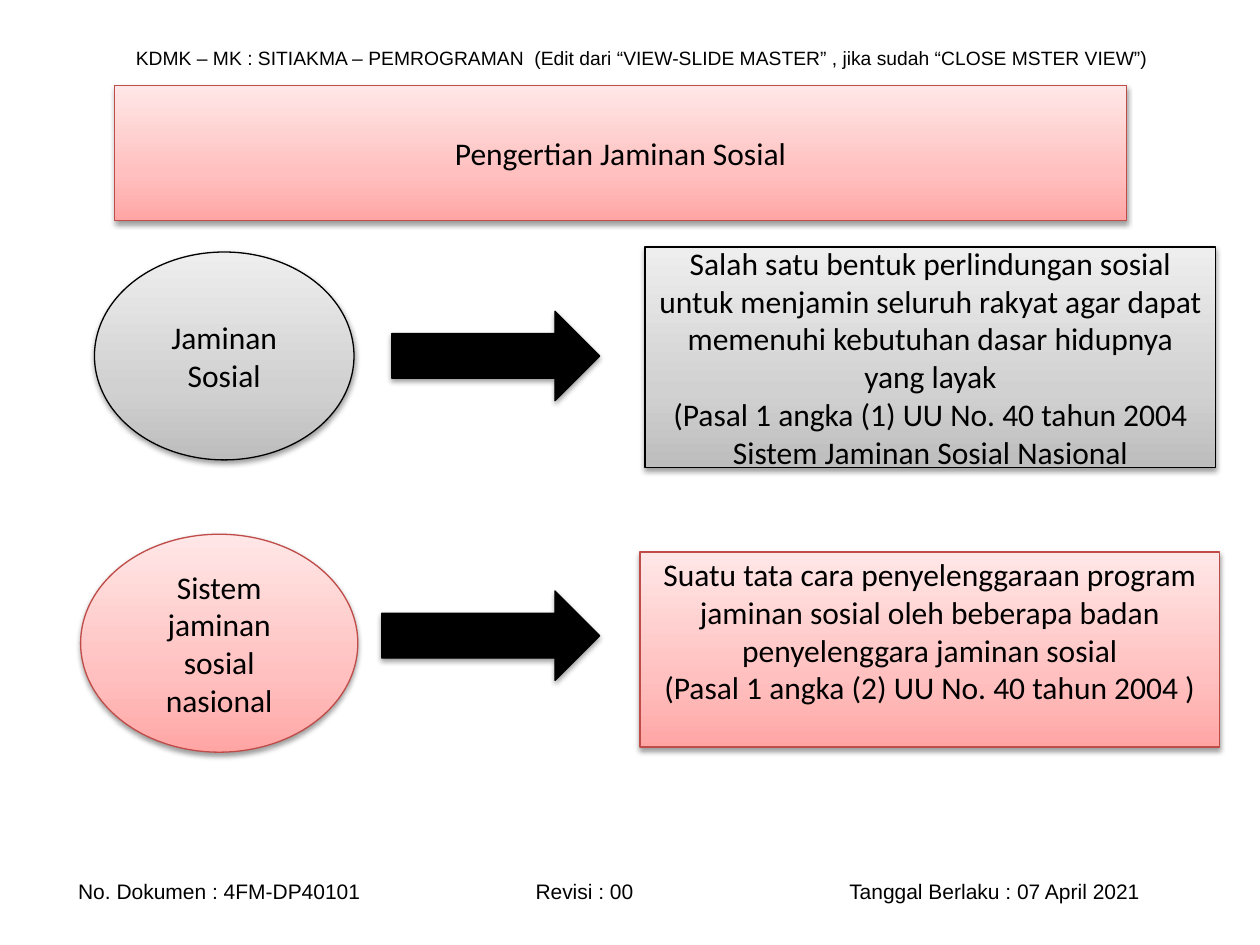
import pptx
import pptx.dml.color
import pptx.enum.shapes
import pptx.enum.text
import pptx.oxml
import pptx.oxml.ns
import pptx.util
from pptx.util import Inches

RGB = pptx.dml.color.RGBColor.from_string
SHAPE = pptx.enum.shapes.MSO_SHAPE
ALIGN = pptx.enum.text.PP_ALIGN
NS = pptx.oxml.ns.nsdecls("a")
qn = pptx.oxml.ns.qn

THEME = {
    "text": "000000",
    "body": {"name": "Calibri", "size": pptx.util.Pt(18)},
    "header": {"name": "Arial", "size": pptx.util.Pt(11)},
    "footer": {"name": "Arial", "size": pptx.util.Pt(12)},
    "red": {"stops": [(0, "FFA6A5"), (35, "FFC0BF"), (100, "FFE7E7")], "line": "BF4C48"},
    "gray": {"stops": [(0, "BDBDBD"), (35, "D1D1D1"), (100, "EEEEEE")], "line": "000000"},
    "black": {"fill": "000000", "line": "000000"},
}


def write(sp, lines, font, align=ALIGN.CENTER):
    tf = sp.text_frame
    settings = {"word_wrap": True, "auto_size": pptx.enum.text.MSO_AUTO_SIZE.NONE,
                "vertical_anchor": pptx.enum.text.MSO_ANCHOR.MIDDLE}
    for key, value in settings.items():
        setattr(tf, key, value)
    for i, line in enumerate(lines):
        p = tf.paragraphs[0] if i == 0 else tf.add_paragraph()
        p.alignment = align
        r = p.add_run()
        r.text = line
        for key, value in THEME[font].items():
            setattr(r.font, key, value)
        r.font.color.rgb = RGB(THEME["text"])
    return tf


def paint(sp, style):
    look = THEME[style]
    spPr = sp._element.spPr
    if "stops" in look:
        sp.fill.gradient()
        sp.fill.gradient_angle = 90
        gsLst = spPr.find(qn("a:gradFill")).find(qn("a:gsLst"))
        for gs in list(gsLst):
            gsLst.remove(gs)
        for pos, color in look["stops"]:
            gsLst.append(pptx.oxml.parse_xml(
                f'<a:gs {NS} pos="{pos * 1000}"><a:srgbClr val="{color}"/></a:gs>'))
    else:
        sp.fill.solid()
        sp.fill.fore_color.rgb = RGB(look["fill"])
    sp.line.color.rgb = RGB(look["line"])
    sp.line.width = pptx.util.Pt(0.75)
    # Soft shadow straight below
    spPr.append(pptx.oxml.parse_xml(
        f'<a:effectLst {NS}><a:outerShdw blurRad="40000" dist="20000" dir="5400000" '
        'rotWithShape="0"><a:srgbClr val="000000"><a:alpha val="38000"/></a:srgbClr>'
        '</a:outerShdw></a:effectLst>'))


prs = pptx.Presentation()
prs.slide_width, prs.slide_height = Inches(10), Inches(7.5)
s = prs.slides.add_slide(prs.slide_layouts[5])

# Header line
sp = s.shapes.add_textbox(Inches(0.98), Inches(0.31), Inches(8.35), Inches(0.29))
write(sp, ["KDMK – MK : SITIAKMA – PEMROGRAMAN  (Edit dari “VIEW-SLIDE MASTER” , "
           "jika sudah “CLOSE MSTER VIEW”)"], "header", ALIGN.LEFT)

# Document footer, three columns on tab stops
sp = s.shapes.add_textbox(Inches(0.2), Inches(6.92), Inches(9.45), Inches(0.3))
tf = sp.text_frame
tf.margin_left = Inches(0.42)
pPr = tf.paragraphs[0]._p.get_or_add_pPr()
tabs = "".join(f'<a:tab pos="{Inches(x)}" algn="l"/>' for x in (3.63, 6.12))
pPr.append(pptx.oxml.parse_xml(f"<a:tabLst {NS}>{tabs}</a:tabLst>"))
write(sp, ["No. Dokumen : 4FM-DP40101\tRevisi : 00\tTanggal Berlaku : 07 April 2021"],
      "footer", ALIGN.LEFT)

# Title in a rounded banner
title = s.shapes.title
banner = {"left": 0.91, "top": 0.68, "width": 8.03, "height": 1.07}
for key, value in banner.items():
    setattr(title, key, Inches(value))
title._element.spPr.append(pptx.oxml.parse_xml(
    f'<a:prstGeom {NS} prst="roundRect"><a:avLst/></a:prstGeom>'))
paint(title, "red")
write(title, ["Pengertian Jaminan Sosial"], "body")

# Term, arrow and definition in each row
SHAPES = [
    (SHAPE.OVAL, "gray", (0.75, 2, 2.06, 1.65), ["Jaminan Sosial"]),
    (SHAPE.RIGHT_ARROW, "black", (3.11, 2.47, 1.65, 0.71), []),
    (SHAPE.RECTANGLE, "gray", (5.12, 1.96, 4.53, 1.75), [
        "Salah satu bentuk perlindungan sosial untuk menjamin seluruh rakyat agar dapat "
        "memenuhi kebutuhan dasar hidupnya yang layak",
        "(Pasal 1 angka (1) UU No. 40 tahun 2004 Sistem Jaminan Sosial Nasional"]),
    (SHAPE.OVAL, "red", (0.64, 4.24, 2.2, 1.73), ["Sistem jaminan sosial", "nasional"]),
    (SHAPE.RIGHT_ARROW, "black", (3.03, 4.69, 1.73, 0.71), []),
    (SHAPE.RECTANGLE, "red", (5.08, 4.38, 4.6, 1.55), [
        "Suatu tata cara penyelenggaraan program jaminan sosial oleh beberapa badan "
        "penyelenggara jaminan sosial",
        "(Pasal 1 angka (2) UU No. 40 tahun 2004 )"]),
]
for kind, style, box, lines in SHAPES:
    sp = s.shapes.add_shape(kind, *map(Inches, box))
    paint(sp, style)
    tf = write(sp, lines, "body")
# The last definition sits above the middle of its box
tf.margin_bottom = Inches(0.35)

prs.save("out.pptx")
